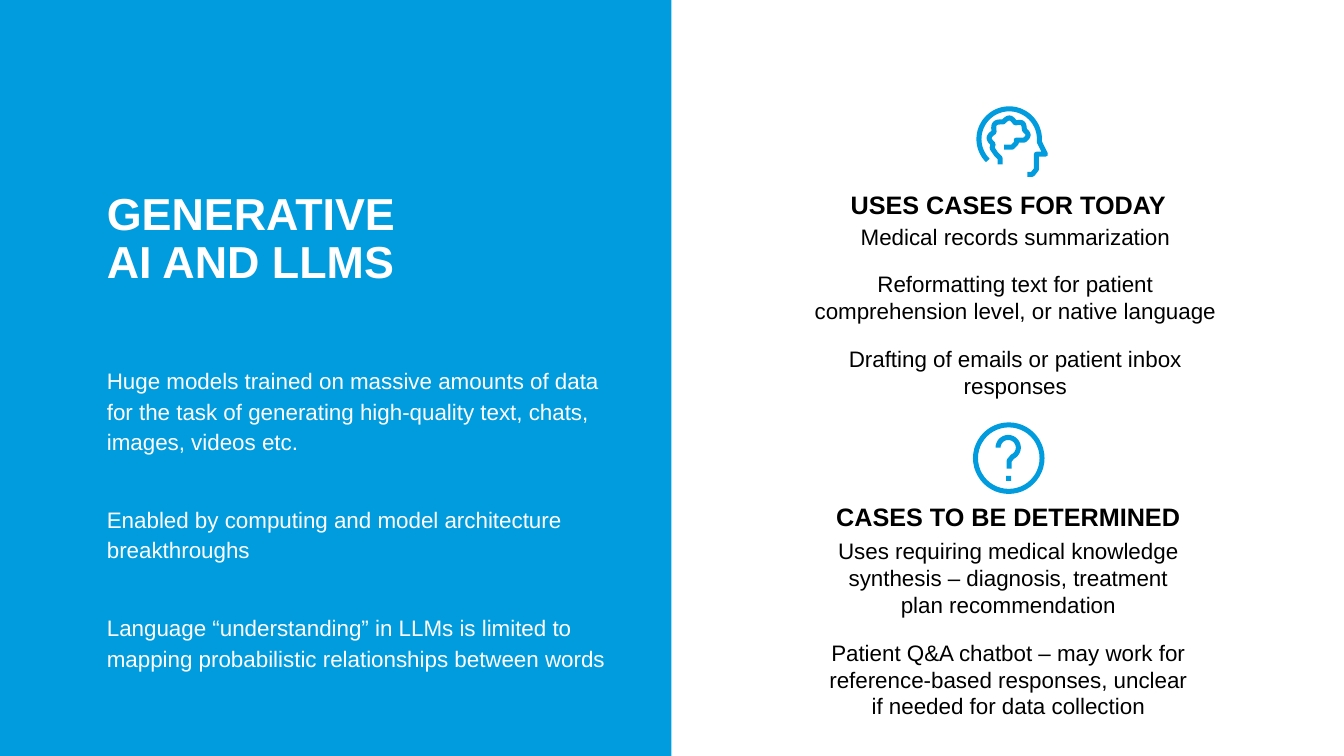
from dataclasses import dataclass
from itertools import pairwise
from math import cos, pi, radians, sin

from lxml.etree import SubElement
from pptx import Presentation
from pptx.dml.color import RGBColor
from pptx.enum.shapes import MSO_SHAPE as Preset
from pptx.enum.text import MSO_ANCHOR as Anchor, MSO_AUTO_SIZE as AutoSize, PP_ALIGN as Align
from pptx.oxml.ns import qn
from pptx.util import Inches, Pt

COLORS = {"blue": "009CDE", "white": "FFFFFF", "black": "000000"}
FONT = "Arial"
STROKE = 0.05

Point = tuple[float, float]


@dataclass(frozen=True)
class Box:
    left: float
    top: float
    width: float
    height: float


@dataclass(frozen=True)
class Style:
    size: int
    color: str
    bold: bool = False
    align: Align = Align.LEFT
    anchor: Anchor = Anchor.TOP
    line_spacing: float = 1.0
    space_before: int = 0
    inset_top: float = 0.0


@dataclass(frozen=True)
class Passage:
    box: Box
    style: Style
    paragraphs: tuple[str, ...]


TITLE_STYLE = Style(32, "white", bold=True, anchor=Anchor.BOTTOM, line_spacing=0.9, inset_top=0.05)
HEADING_STYLE = Style(18, "black", bold=True, align=Align.CENTER, anchor=Anchor.BOTTOM, line_spacing=0.9)
CASES_STYLE = Style(16, "black", align=Align.CENTER, space_before=15, inset_top=0.05)
SUMMARY_STYLE = Style(16, "white", line_spacing=1.13, space_before=34)

TITLE = Passage(Box(1.06, 1.86, 3.35, 1), TITLE_STYLE, ("GENERATIVE AI AND LLMS",))
SUMMARY = Passage(Box(1.06, 3.61, 5.01, 2.79), SUMMARY_STYLE, (
    "Huge models trained on massive amounts of data for the task of generating "
    "high-quality text, chats, images, videos etc.",
    "Enabled by computing and model architecture breakthroughs",
    "Language “understanding” in LLMs is limited to mapping probabilistic "
    "relationships between words",
))
CASES = (
    Passage(Box(8.18, 1.78, 3.64, 0.4), HEADING_STYLE, ("USES CASES FOR TODAY",)),
    Passage(Box(8.03, 2.16, 4.08, 1.8), CASES_STYLE, (
        "Medical records summarization",
        "Reformatting text for patient comprehension level, or native language",
        "Drafting of emails or patient inbox responses",
    )),
    Passage(Box(8.18, 5, 3.64, 0.28), HEADING_STYLE, ("CASES TO BE DETERMINED",)),
    Passage(Box(8.18, 5.28, 3.64, 1.93), CASES_STYLE, (
        "Uses requiring medical knowledge synthesis – diagnosis, treatment plan recommendation",
        "Patient Q&A chatbot – may work for reference-based responses, unclear "
        "if needed for data collection",
    )),
)

FACE = [(10.37, 1.53), (10.28, 1.53), (10.28, 1.68), (10.24, 1.73), (10.19, 1.73)]
BRAIN_STEM = [(9.92, 1.63), (9.92, 1.57), (9.88, 1.53), (9.84, 1.47)]
BRAIN_FOLDS = [(9.85, 1.43), (9.86, 1.31), (9.95, 1.21), (10.07, 1.22), (10.16, 1.29), (10.16, 1.39)]
BRAIN_BASE = [(10.08, 1.39), (10.08, 1.42), (10.04, 1.46), (9.96, 1.46)]
QUESTION_STEM = [(10.01, 4.57), (10.01, 4.65)]


def arc(center: Point, radius: float, start: int, end: int, step: int = 5) -> list[Point]:
    return [
        (center[0] + radius * cos(radians(angle)), center[1] + radius * sin(radians(angle)))
        for angle in range(start, end + 1, step)
    ]


def bumps(nodes: list[Point], bulge: float = 0.37, steps: int = 10) -> list[Point]:
    points = []
    for (x1, y1), (x2, y2) in pairwise(nodes):
        dx, dy = x2 - x1, y2 - y1
        for step in range(steps + 1):
            along = step / steps
            out = bulge * sin(pi * along)
            points.append((x1 + along * dx + out * dy, y1 + along * dy - out * dx))
    return points


def emu(box: Box) -> tuple[int, ...]:
    return tuple(Inches(side) for side in (box.left, box.top, box.width, box.height))


def color(key: str) -> RGBColor:
    return RGBColor.from_string(COLORS[key])


def add_preset(shapes, preset: Preset, box: Box):
    shape = shapes.add_shape(preset, *emu(box))
    shape.shadow.inherit = False
    shape.fill.solid()
    shape.fill.fore_color.rgb = color("blue")
    shape.line.fill.background()
    return shape


def add_stroke(shapes, points: list[Point]) -> None:
    start, *rest = [(Inches(x), Inches(y)) for x, y in points]
    builder = shapes.build_freeform(*start)
    builder.add_line_segments(rest, close=False)
    stroke = builder.convert_to_shape()
    stroke.shadow.inherit = False
    stroke.fill.background()
    stroke.line.color.rgb = color("blue")
    stroke.line.width = Inches(STROKE)


def write(holder, passage: Passage) -> None:
    style = passage.style
    holder.left, holder.top, holder.width, holder.height = emu(passage.box)
    frame = holder.text_frame
    frame.word_wrap = True
    frame.auto_size = AutoSize.NONE
    frame.vertical_anchor = style.anchor
    frame.margin_left = frame.margin_right = frame.margin_bottom = 0
    frame.margin_top = Inches(style.inset_top)
    for index, words in enumerate(passage.paragraphs):
        paragraph = frame.add_paragraph() if index else frame.paragraphs[0]
        paragraph.alignment = style.align
        paragraph.line_spacing = style.line_spacing
        paragraph.space_before = Pt(style.space_before)
        properties = paragraph._p.get_or_add_pPr()
        properties.set("marL", "0")
        properties.set("indent", "0")
        SubElement(properties, qn("a:buNone"))
        run = paragraph.add_run()
        run.text = words
        run.font.name = FONT
        run.font.size = Pt(style.size)
        run.font.bold = style.bold
        run.font.color.rgb = color(style.color)


def main() -> None:
    deck = Presentation()
    deck.slide_width, deck.slide_height = Inches(13.33), Inches(7.5)
    slide = deck.slides.add_slide(deck.slide_layouts.get_by_name("Comparison"))
    shapes = slide.shapes

    panel = add_preset(shapes, Preset.RECTANGLE, Box(0, 0, 6.66, 7.5))
    shapes.element.insert(2, panel.element)

    for holder, passage in zip(slide.placeholders, (TITLE, *CASES)):
        write(holder, passage)
    write(shapes.add_textbox(*emu(SUMMARY.box)), SUMMARY)

    mind_icon = shapes.add_group_shape().shapes
    add_stroke(mind_icon, arc((10.01, 1.38), 0.3, 135, 365) + FACE)
    add_stroke(mind_icon, BRAIN_STEM + bumps(BRAIN_FOLDS) + BRAIN_BASE)

    question_icon = shapes.add_group_shape().shapes
    add_preset(question_icon, Preset.RECTANGLE, Box(9.98, 4.72, 0.05, 0.05))
    ring = add_preset(question_icon, Preset.DONUT, Box(9.65, 4.19, 0.71, 0.71))
    ring.adjustments[0] = 0.07
    add_stroke(question_icon, arc((10, 4.44), 0.1, 180, 425) + QUESTION_STEM)

    deck.save("out.pptx")


if __name__ == "__main__":
    main()
